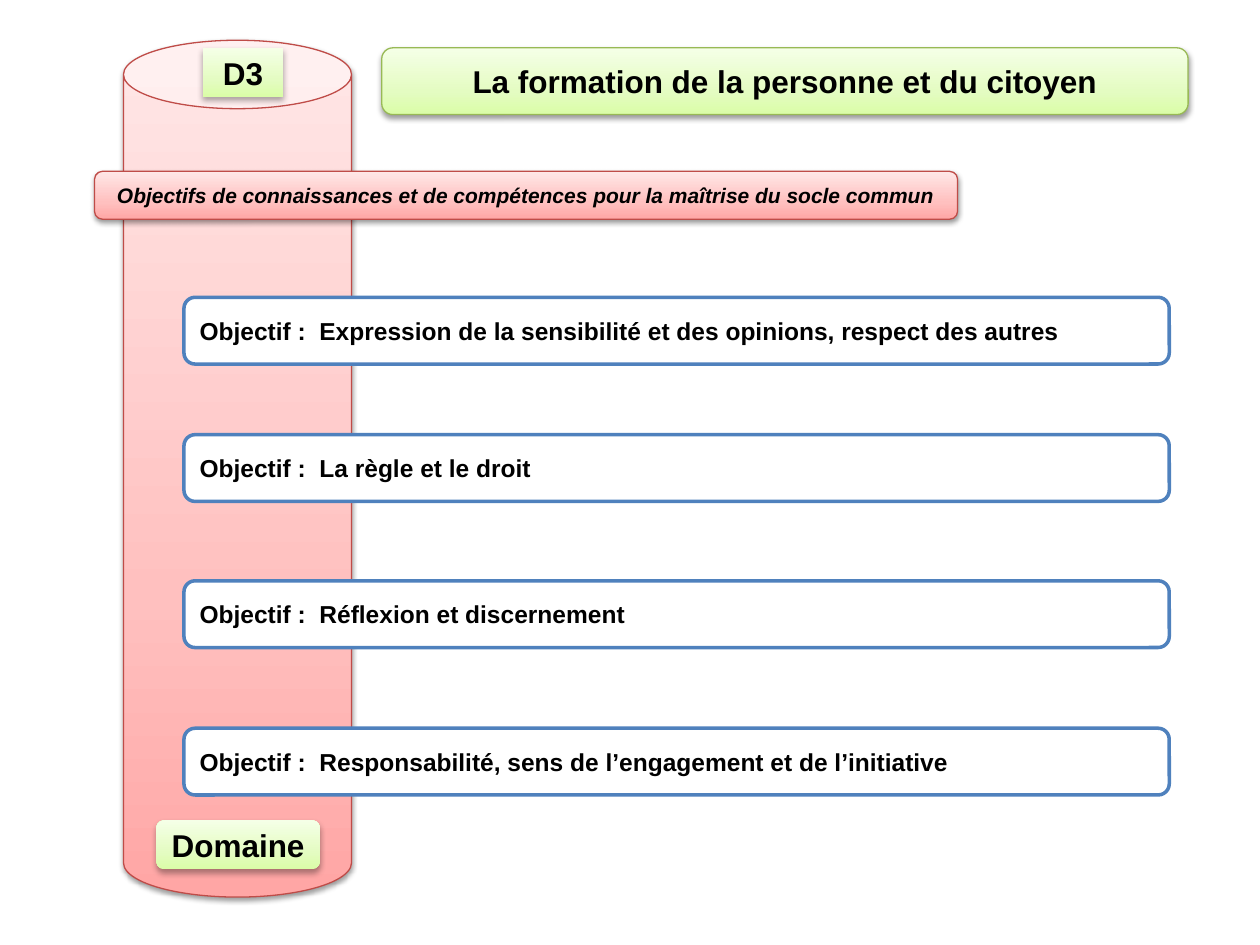
from copy import deepcopy
from dataclasses import dataclass
from typing import Optional

from lxml import etree
from pptx import Presentation
from pptx import util as u
from pptx.dml.color import RGBColor
from pptx.enum import shapes, text
from pptx.oxml.ns import qn

RED = ("FFA6A5", "FFC0BF", "FFE7E7")
GREEN = ("DAFDA7", "E4FCC2", "F5FFE7")
STOP_POSITIONS = (0, 0.35, 1)
RECTANGLE = shapes.MSO_SHAPE.RECTANGLE
ROUNDED = shapes.MSO_SHAPE.ROUNDED_RECTANGLE
CAN = shapes.MSO_SHAPE.CAN
LEFT, CENTER = text.PP_ALIGN.LEFT, text.PP_ALIGN.CENTER
TOP, MIDDLE = text.MSO_ANCHOR.TOP, text.MSO_ANCHOR.MIDDLE


@dataclass(frozen=True)
class Shadow:
    opacity: int
    blur: float
    distance: float


@dataclass(frozen=True)
class Box:
    left: float
    top: float
    width: float
    height: float
    colors: tuple[str, ...]
    line: Optional[str] = None
    line_width: float = 0.75
    shadow: Optional[Shadow] = None
    preset: shapes.MSO_SHAPE = ROUNDED
    label: str = ""
    size: int = 18
    italic: bool = False
    align: text.PP_ALIGN = CENTER
    anchor: text.MSO_ANCHOR = MIDDLE
    wrap: bool = True


FRAME_SHADOW = Shadow(38, 3.1, 1.6)
TAG_SHADOW = Shadow(32, 3.5, 2.2)

OBJECTIVES = (
    (2.36, "Expression de la sensibilité et des opinions, respect des autres"),
    (3.45, "La règle et le droit"),
    (4.61, "Réflexion et discernement"),
    (5.78, "Responsabilité, sens de l’engagement et de l’initiative"),
)

PILLAR = Box(0.98, 0.32, 1.81, 6.8, RED, "BF4C48", shadow=FRAME_SHADOW, preset=CAN)
NUMBER_TAG = Box(1.61, 0.38, 0.64, 0.39, GREEN, shadow=TAG_SHADOW, preset=RECTANGLE,
                 label="D3", anchor=TOP, wrap=False)
TITLE = Box(3.03, 0.38, 6.4, 0.53, GREEN, "98B955", shadow=FRAME_SHADOW,
            label="La formation de la personne et du citoyen")
SUBTITLE = Box(0.75, 1.36, 6.85, 0.38, RED, "BF4C48", shadow=FRAME_SHADOW,
               label="Objectifs de connaissances et de compétences pour la maîtrise du socle commun",
               size=12, italic=True)
DOMAIN_TAG = Box(1.24, 6.51, 1.3, 0.39, GREEN, shadow=TAG_SHADOW, label="Domaine", wrap=False)


def rgb(color: str) -> RGBColor:
    return RGBColor.from_string(color)


def fill_shape(shape, colors: tuple[str, ...]) -> None:
    if len(colors) == 1:
        shape.fill.solid()
        shape.fill.fore_color.rgb = rgb(colors[0])
        return
    shape.fill.gradient()
    shape.fill.gradient_angle = 90
    stop_list = shape._element.spPr.find(".//" + qn("a:gsLst"))
    stop_list.append(deepcopy(stop_list[0]))
    for stop, position, color in zip(shape.fill.gradient_stops, STOP_POSITIONS, colors):
        stop.position = position
        stop.color.rgb = rgb(color)


def add_shadow(shape, shadow: Shadow) -> None:
    effects = shape._element.spPr.find(qn("a:effectLst"))
    outer = etree.SubElement(effects, qn("a:outerShdw"), blurRad=str(u.Pt(shadow.blur)),
                             dist=str(u.Pt(shadow.distance)), dir="5400000", rotWithShape="0")
    color = etree.SubElement(outer, qn("a:srgbClr"), val="000000")
    etree.SubElement(color, qn("a:alpha"), val=str(shadow.opacity * 1000))


def add_label(shape, box: Box) -> None:
    frame = shape.text_frame
    frame.word_wrap = box.wrap
    frame.vertical_anchor = box.anchor
    paragraph = frame.paragraphs[0]
    paragraph.alignment = box.align
    run = paragraph.add_run()
    run.text = box.label
    run.font.name = "Arial"
    run.font.size = u.Pt(box.size)
    run.font.bold = True
    run.font.italic = box.italic
    run.font.color.rgb = rgb("000000")


def add_box(slide, box: Box):
    shape = slide.shapes.add_shape(box.preset, u.Inches(box.left), u.Inches(box.top),
                                   u.Inches(box.width), u.Inches(box.height))
    shape.shadow.inherit = False
    fill_shape(shape, box.colors)
    if box.line:
        shape.line.color.rgb = rgb(box.line)
        shape.line.width = u.Pt(box.line_width)
    else:
        shape.line.fill.background()
    if box.shadow:
        add_shadow(shape, box.shadow)
    if box.label:
        add_label(shape, box)
    return shape


def objective_box(top: float, objective: str) -> Box:
    return Box(1.46, top, 7.82, 0.53, ("FFFFFF",), "4F81BD", 2,
               label=f"Objectif :  {objective}", size=14, align=LEFT)


def main() -> None:
    presentation = Presentation()
    presentation.slide_width = u.Inches(10)
    presentation.slide_height = u.Inches(7.5)
    slide = presentation.slides.add_slide(presentation.slide_layouts[6])
    pillar = add_box(slide, PILLAR)
    pillar.adjustments[0] = 0.3
    objectives = [objective_box(top, objective) for top, objective in OBJECTIVES]
    for box in (NUMBER_TAG, *objectives, TITLE, SUBTITLE, DOMAIN_TAG):
        add_box(slide, box)
    presentation.save("out.pptx")


if __name__ == "__main__":
    main()
